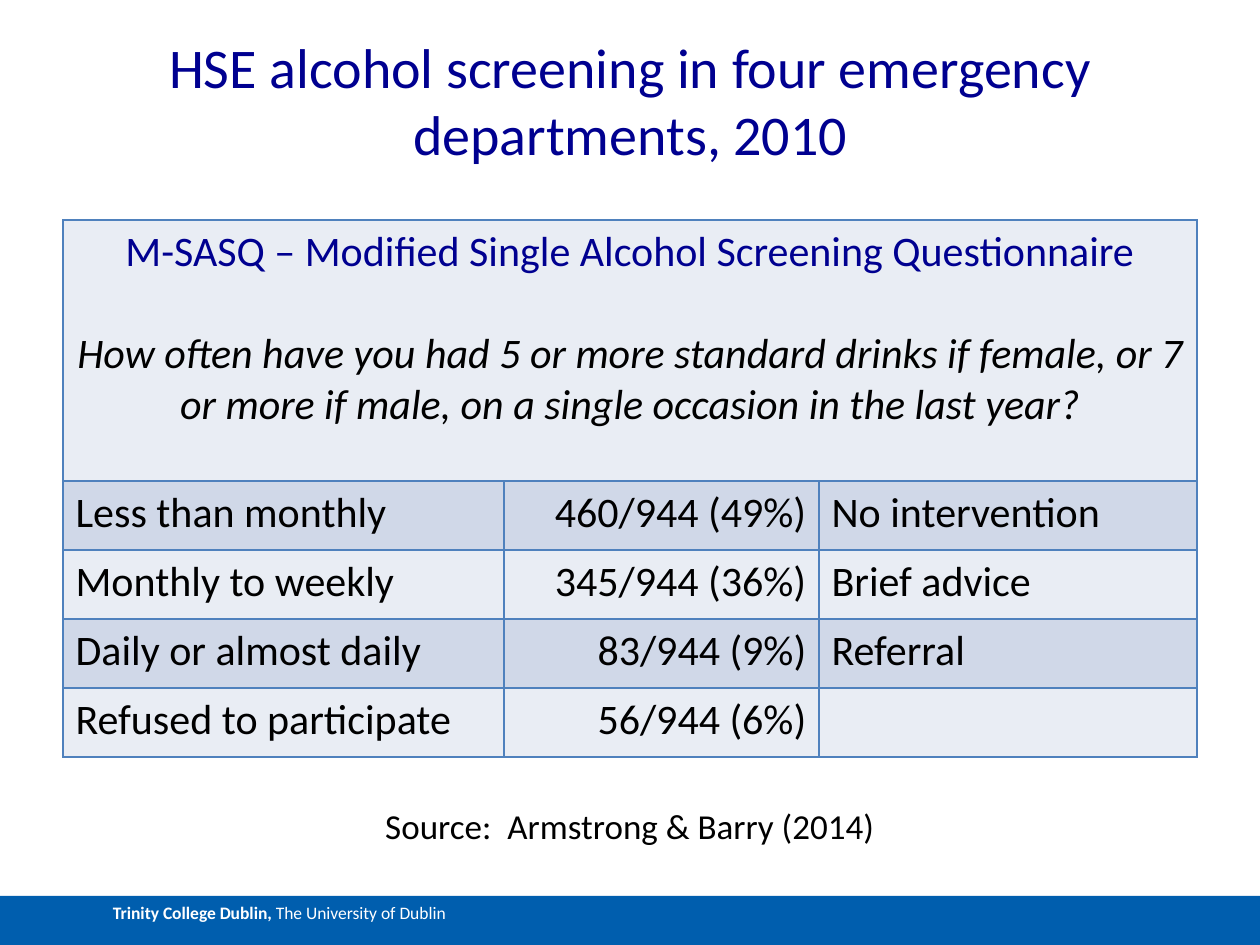
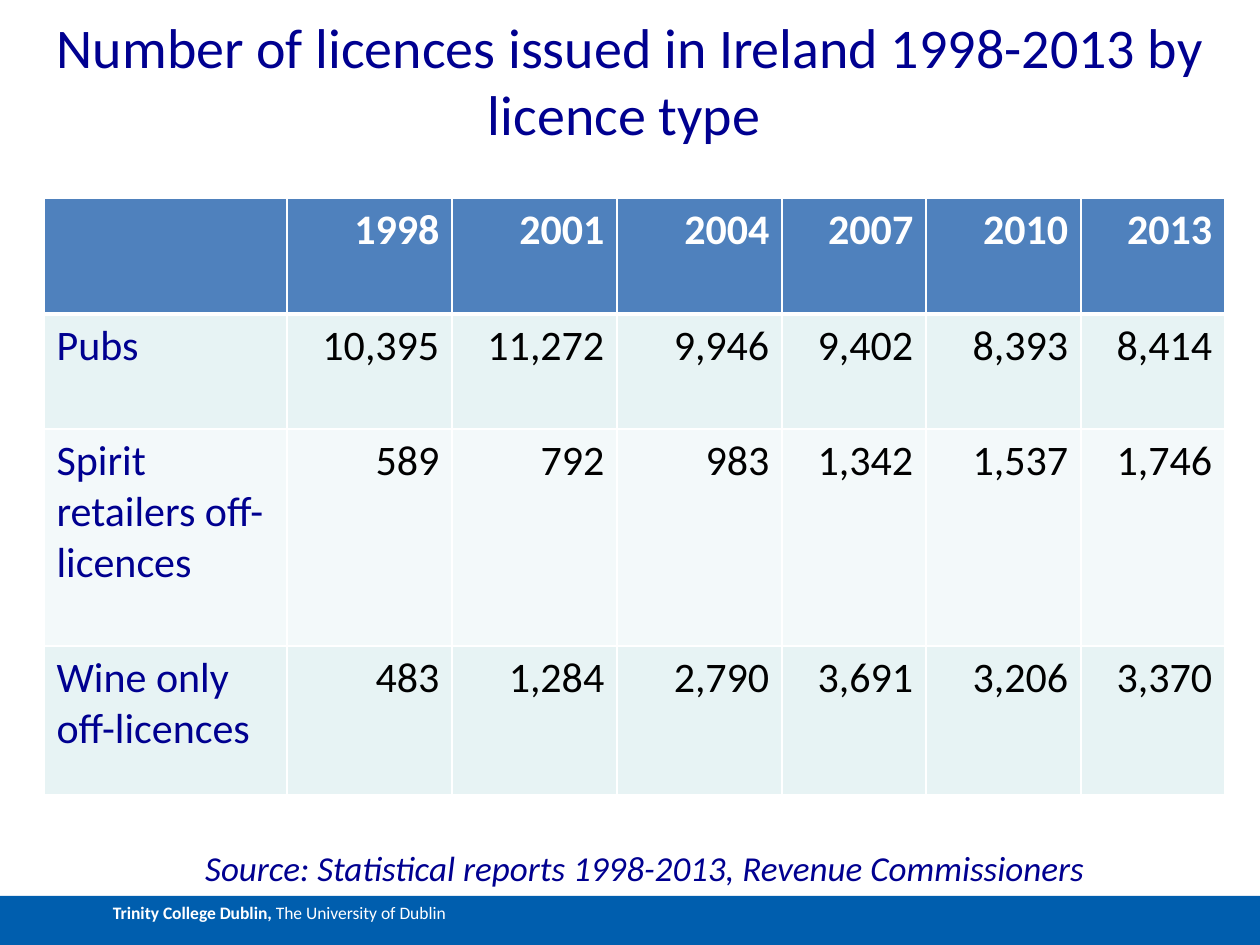
from lxml import etree
from pptx import Presentation
from pptx import util as u
from pptx.dml.color import RGBColor
from pptx.enum import shapes, text
from pptx.oxml import ns

PX = 914400 / 126
NAVY = RGBColor(0x00, 0x00, 0x90)
BLACK = RGBColor(0x00, 0x00, 0x00)
WHITE = RGBColor(0xFF, 0xFF, 0xFF)
BAND = RGBColor(0x00, 0x5E, 0xAE)
BLUE = RGBColor(0x4F, 0x81, 0xBD)
BLUE_DARK_ROW = RGBColor(0xD0, 0xD8, 0xE8)
BLUE_LIGHT_ROW = RGBColor(0xE9, 0xED, 0xF4)
TEAL_DARK_ROW = RGBColor(0xE7, 0xF3, 0xF4)
TEAL_LIGHT_ROW = RGBColor(0xF3, 0xF9, 0xFA)
LEFT, CENTER, RIGHT = text.PP_ALIGN.LEFT, text.PP_ALIGN.CENTER, text.PP_ALIGN.RIGHT


def write(para, words, size, color, align=LEFT, **formats):
    para.alignment = align
    span = para.add_run()
    span.text = words
    span.font.color.rgb = color
    for name, value in {"name": "Calibri", "size": u.Pt(size), **formats}.items():
        setattr(span.font, name, value)


def add_grid(page, left, top, widths, heights, fills, line_color, thick_rule=None):
    frame = page.shapes.add_table(
        len(heights), len(widths),
        *[u.Emu(round(n * PX)) for n in (left, top, sum(widths), sum(heights))])
    table = frame.table
    for column, width in zip(table.columns, widths):
        column.width = u.Emu(round(width * PX))
    for row, height in zip(table.rows, heights):
        row.height = u.Emu(round(height * PX))
    for r, fill in enumerate(fills):
        for c in range(len(widths)):
            cell = table.cell(r, c)
            props = cell._tc.get_or_add_tcPr()
            for side, rule in (("lnL", None), ("lnR", None), ("lnT", r), ("lnB", r + 1)):
                points = 3 if rule is not None and rule == thick_rule else 1
                line = etree.SubElement(props, ns.qn("a:" + side), w=str(u.Pt(points)))
                solid = etree.SubElement(line, ns.qn("a:solidFill"))
                etree.SubElement(solid, ns.qn("a:srgbClr"), val=str(line_color))
            cell.fill.solid()
            cell.fill.fore_color.rgb = fill
    return table


deck = Presentation()
deck.slide_width = u.Emu(round(1260 * PX))
deck.slide_height = u.Emu(round(945 * PX))

slides = [
    ("HSE alcohol screening in four emergency departments, 2010", (32, 38, 1197, 129),
     "Source:  Armstrong & Barry (2014)", (63, 798, 1134, 55), BLACK, False),
    ("Number of licences issued in Ireland 1998-2013 by licence type ", (45, 0, 1171, 147),
     "Source: Statistical reports 1998-2013, Revenue Commissioners",
     (73, 840, 1144, 55), NAVY, True),
]
pages = []
for heading, heading_place, source, source_place, source_color, italic in slides:
    page = deck.slides.add_slide(deck.slide_layouts[5])
    pages.append(page)

    band = page.shapes.add_shape(
        shapes.MSO_SHAPE.RECTANGLE, *[u.Emu(round(n * PX)) for n in (0, 896, 1260, 49)])
    band.shadow.inherit = False
    band.fill.solid()
    band.fill.fore_color.rgb = BAND
    band.line.fill.background()
    band.text_frame.margin_left = u.Emu(round(113 * PX))
    band.text_frame.vertical_anchor = text.MSO_ANCHOR.TOP
    para = band.text_frame.paragraphs[0]
    write(para, "Trinity College Dublin, ", 10, WHITE, bold=True)
    write(para, "The University of Dublin", 10, WHITE)

    title = page.shapes.title
    title.left, title.top, title.width, title.height = [
        u.Emu(round(n * PX)) for n in heading_place]
    frame_formats = {
        "margin_left": 0, "margin_top": 0, "margin_right": 0, "margin_bottom": 0,
        "vertical_anchor": text.MSO_ANCHOR.BOTTOM, "word_wrap": True,
        "auto_size": text.MSO_AUTO_SIZE.NONE,
    }
    for name, value in frame_formats.items():
        setattr(title.text_frame, name, value)
    write(title.text_frame.paragraphs[0], heading, 32, NAVY, CENTER)

    box = page.shapes.add_textbox(*[u.Emu(round(n * PX)) for n in source_place])
    box.text_frame.word_wrap = True
    write(box.text_frame.paragraphs[0], source, 20, source_color, CENTER, italic=italic)

screening_page, licences_page = pages

answers = [
    ("Less than monthly", "460/944 (49%)", "No intervention"),
    ("Monthly to weekly", "345/944 (36%)", "Brief advice"),
    ("Daily or almost daily", "83/944 (9%)", "Referral"),
    ("Refused to participate", "56/944 (6%)", ""),
]
screening = add_grid(
    screening_page, 63, 220, [441, 315, 378], [261] + [69] * 4,
    [BLUE_LIGHT_ROW, BLUE_DARK_ROW] * 2 + [BLUE_LIGHT_ROW], BLUE)
screening.cell(0, 0).merge(screening.cell(0, 2))
question = screening.cell(0, 0).text_frame
write(question.paragraphs[0], "M-SASQ – Modified Single Alcohol Screening Questionnaire",
      24, NAVY, CENTER)
para = question.add_paragraph()
para.space_before = u.Pt(29)
write(para, "How often have you had 5 or more standard drinks if female, or 7 or more "
      "if male, on a single occasion in the last year?", 24, BLACK, CENTER, italic=True)
for r, answer in enumerate(answers, 1):
    for c, words in enumerate(answer):
        if words:
            write(screening.cell(r, c).text_frame.paragraphs[0], words, 24, BLACK,
                  RIGHT if c == 1 else LEFT)

licence_rows = [
    ("", "1998", "2001", "2004", "2007", "2010", "2013"),
    ("Pubs", "10,395", "11,272", "9,946", "9,402", "8,393", "8,414"),
    ("Spirit retailers off-licences", "589", "792", "983", "1,342", "1,537", "1,746"),
    ("Wine only off-licences", "483", "1,284", "2,790", "3,691", "3,206", "3,370"),
]
licences = add_grid(
    licences_page, 44, 198, [243, 165, 165, 165, 144, 155, 144], [116, 115, 217, 149],
    [BLUE, TEAL_DARK_ROW, TEAL_LIGHT_ROW, TEAL_DARK_ROW], WHITE, thick_rule=1)
for r, row in enumerate(licence_rows):
    for c, words in enumerate(row):
        if words:
            color = WHITE if r == 0 else NAVY if c == 0 else BLACK
            write(licences.cell(r, c).text_frame.paragraphs[0], words, 24, color,
                  RIGHT if c else LEFT, bold=r == 0)

deck.save("out.pptx")
